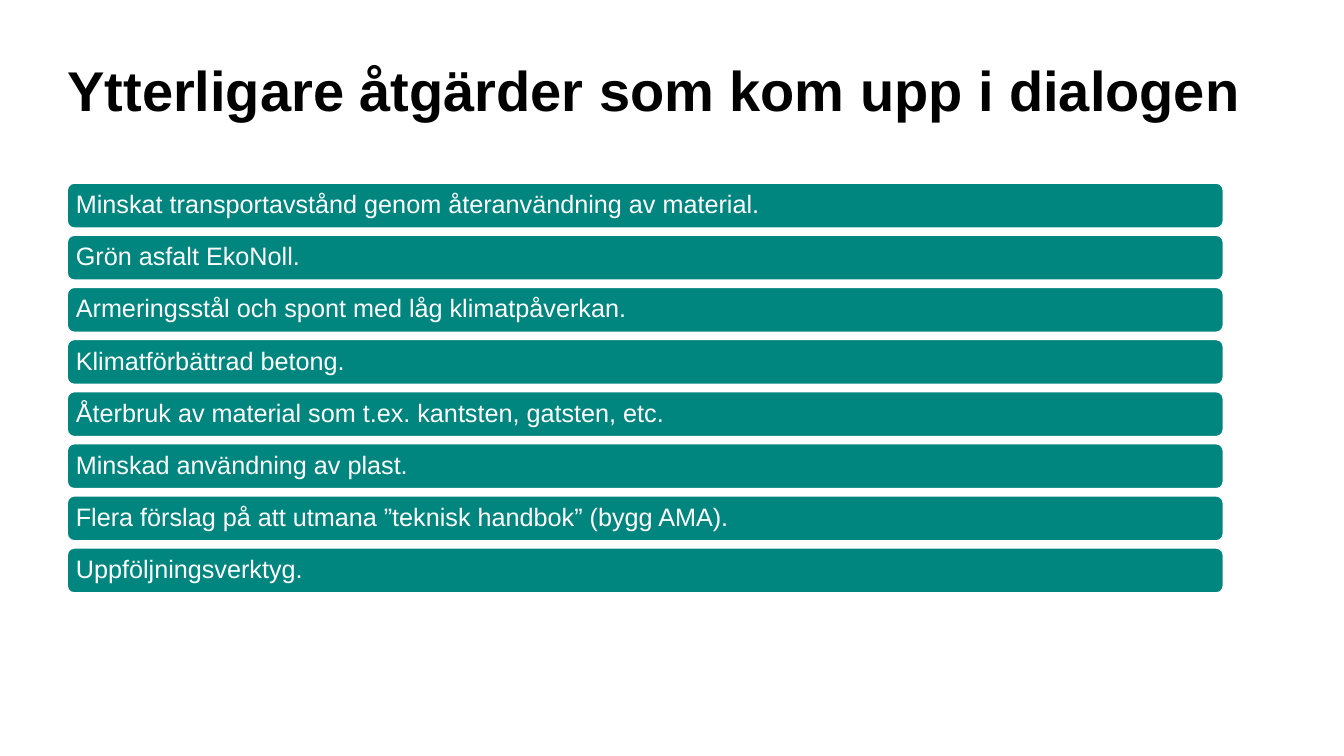
from pptx import Presentation
from pptx.dml.color import RGBColor
from pptx.enum.shapes import MSO_SHAPE
from pptx.enum.text import MSO_ANCHOR, PP_ALIGN
from pptx.util import Inches, Pt

BLACK = RGBColor(0x00, 0x00, 0x00)
WHITE = RGBColor(0xFF, 0xFF, 0xFF)
TEAL = RGBColor(0x00, 0x86, 0x7F)
FONT = "Arial"

# Grid in inches: one column of equally spaced rows
LEFT, TOP = 0.66, 1.81
BAR_WIDTH, BAR_HEIGHT = 11.48, 0.46
ROW_PITCH = 3.62 / 7

TITLE = "Ytterligare åtgärder som kom upp i dialogen"
MEASURES = [
    "Minskat transportavstånd genom återanvändning av material.",
    "Grön asfalt EkoNoll.",
    "Armeringsstål och spont med låg klimatpåverkan.",
    "Klimatförbättrad betong.",
    "Återbruk av material som t.ex. kantsten, gatsten, etc.",
    "Minskad användning av plast.",
    "Flera förslag på att utmana ”teknisk handbok” (bygg AMA).",
    "Uppföljningsverktyg.",
]


def set_margins(tf, side, top, bottom):
    tf.margin_left = tf.margin_right = Inches(side)
    tf.margin_top, tf.margin_bottom = Inches(top), Inches(bottom)


def write(tf, text, size, color, bold=False):
    tf.word_wrap = True
    p = tf.paragraphs[0]
    p.text = text
    p.alignment = PP_ALIGN.LEFT
    p.font.name, p.font.size = FONT, Pt(size)
    p.font.bold, p.font.color.rgb = bold, color
    return p


def add_title(s, text):
    box = s.shapes.add_textbox(Inches(0.67), Inches(0.5), Inches(12), Inches(0.91))
    set_margins(box.text_frame, 0, 0.05, 0)
    write(box.text_frame, text, 40, BLACK, bold=True)


def add_bar(s, row, text):
    sp = s.shapes.add_shape(
        MSO_SHAPE.ROUNDED_RECTANGLE, Inches(LEFT), Inches(TOP + row * ROW_PITCH),
        Inches(BAR_WIDTH), Inches(BAR_HEIGHT))
    sp.shadow.inherit = False
    sp.fill.solid()
    sp.fill.fore_color.rgb = TEAL
    sp.line.color.rgb = WHITE
    sp.line.width = Pt(2)
    tf = sp.text_frame
    tf.vertical_anchor = MSO_ANCHOR.MIDDLE
    set_margins(tf, 0.07, 0.07, 0.07)
    write(tf, text, 18, WHITE).line_spacing = 0.9


def main():
    prs = Presentation()
    prs.slide_width, prs.slide_height = Inches(13.33), Inches(7.5)
    s = prs.slides.add_slide(prs.slide_layouts[6])

    # Heading
    add_title(s, TITLE)

    # List of measures
    for row, text in enumerate(MEASURES):
        add_bar(s, row, text)

    prs.save("out.pptx")


if __name__ == "__main__":
    main()
